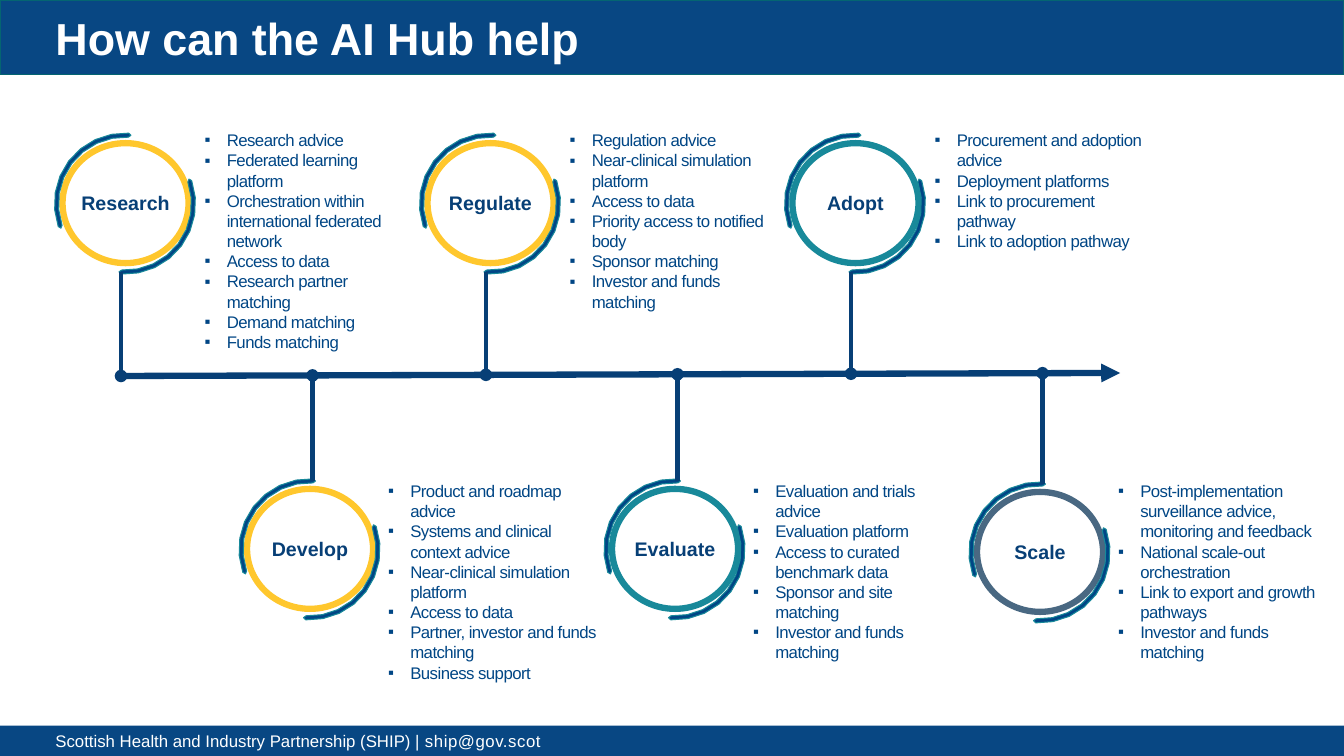
from math import cos, radians, sin
from lxml import etree
from pptx import Presentation, util as u
from pptx.dml.color import RGBColor
from pptx.enum import shapes, text
from pptx.oxml.ns import qn

BAR = RGBColor(0x08, 0x47, 0x83)
EDGE = RGBColor(0x04, 0x65, 0x71)
NAVY = RGBColor(0x07, 0x3F, 0x76)
BLUE = RGBColor(0x00, 0x46, 0x85)
GOLD = RGBColor(0xFF, 0xC7, 0x2D)
TEAL = RGBColor(0x18, 0x89, 0x9A)
SLATE = RGBColor(0x49, 0x68, 0x82)
WHITE = RGBColor(0xFF, 0xFF, 0xFF)

TITLE = "How can the AI Hub help"
FOOT = [("Scottish Health and Industry Partnership (SHIP) | ", 0), ("ship@gov.scot", 40)]

# Name, ring colour, ring centre height, list width, list items
UPPER = [
    ("Research", GOLD, 2.02, 2.06, [
        "Research advice", "Federated learning platform",
        "Orchestration within international federated network",
        "Access to data", "Research partner matching",
        "Demand matching", "Funds matching"]),
    ("Regulate", GOLD, 2.02, 2.06, [
        "Regulation advice", "Near-clinical simulation platform",
        "Access to data", "Priority access to notified body",
        "Sponsor matching", "Investor and funds matching"]),
    ("Adopt", TEAL, 2.02, 2.06, [
        "Procurement and adoption advice", "Deployment platforms",
        "Link to procurement pathway", "Link to adoption pathway"]),
]
LOWER = [
    ("Develop", GOLD, 5.45, 2.14, [
        "Product and roadmap advice", "Systems and clinical context advice",
        "Near-clinical simulation platform", "Access to data",
        "Partner, investor and funds matching", "Business support"]),
    ("Evaluate", TEAL, 5.45, 2.06, [
        "Evaluation and trials advice", "Evaluation platform",
        "Access to curated benchmark data", "Sponsor and site matching",
        "Investor and funds matching"]),
    ("Scale", SLATE, 5.48, 2.06, [
        "Post-implementation surveillance advice, monitoring and feedback",
        "National scale-out orchestration",
        "Link to export and growth pathways", "Investor and funds matching"]),
]
# Stages, first ring centre, stem offset, stem reach from centre, list offset, list top
ROWS = [(UPPER, 1.24, -0.04, 0.68, 0.79, 1.29),
        (LOWER, 3.07, 0.03, -0.68, 0.78, 4.77)]
STEP = 3.62
WIDE, HIGH = 13.33, 7.5
START, END = (1.2, 3.73), (11.11, 3.7)

deck = Presentation()
deck.slide_width, deck.slide_height = u.Inches(WIDE), u.Inches(HIGH)
slide = deck.slides.add_slide(deck.slide_layouts[6])


def paint(shape, fill, line=None, width=0):
    shape.shadow.inherit = False
    shape.fill.solid()
    shape.fill.fore_color.rgb = fill
    if line is None:
        shape.line.fill.background()
    else:
        shape.line.color.rgb = line
        shape.line.width = u.Pt(width)


def frame(shape, left=0, top=0, right=0, bottom=0, anchor=text.MSO_ANCHOR.MIDDLE):
    body = shape.text_frame
    body.word_wrap = True
    body.vertical_anchor = anchor
    body.margin_left, body.margin_top = u.Inches(left), u.Inches(top)
    body.margin_right, body.margin_bottom = u.Inches(right), u.Inches(bottom)
    return body


def write(para, words, size, color, bold=False, gap=0):
    """Add one run; gap is letter spacing in hundredths of a point."""
    run = para.add_run()
    run.text = words
    font = run.font
    font.name, font.size, font.bold = "Arial", u.Pt(size), bold
    font.color.rgb = color
    if gap:
        font._element.set("spc", str(gap))


def block(home, kind, x, y, w, h):
    return home.add_shape(kind, *map(u.Inches, (x, y, w, h)))


def banner(y, h, line=None):
    bar = block(slide.shapes, shapes.MSO_SHAPE.RECTANGLE, 0, y, WIDE, h)
    paint(bar, BAR, line, 1)
    para = frame(bar, 0.55, 0.05, 0.08, 0.05).paragraphs[0]
    para.alignment = text.PP_ALIGN.LEFT
    return para


def link(start, end, width, tip):
    line = slide.shapes.add_connector(
        shapes.MSO_CONNECTOR.STRAIGHT, *map(u.Inches, start + end))
    line.line.color.rgb = NAVY
    line.line.width = u.Pt(width)
    props = line._element.spPr
    etree.SubElement(props.find(qn("a:ln")), qn("a:tailEnd"), type=tip)
    etree.SubElement(props, qn("a:effectLst"))


def swoosh(home, x, y, turn):
    """Draw a thin arc band with pointed ends around a ring."""
    sweep = range(-19, 94, 14)
    polar = [(0.7, a) for a in sweep] + [(0.68, 95)]
    polar += [(0.66, a) for a in reversed(sweep)] + [(0.68, -21)]
    dots = [(u.Inches(x + r * cos(radians(a + turn))),
             u.Inches(y + r * sin(radians(a + turn)))) for r, a in polar]
    pen = home.build_freeform(*dots[0])
    pen.add_line_segments(dots[1:])
    paint(pen.convert_to_shape(), BLUE, TEAL, 0.75)


def badge(name, color, x, y):
    home = slide.shapes.add_group_shape().shapes
    ring = block(home, shapes.MSO_SHAPE.OVAL, x - 0.62, y - 0.6, 1.25, 1.19)
    paint(ring, WHITE, color, 4.5)
    para = frame(ring).paragraphs[0]
    para.alignment = text.PP_ALIGN.CENTER
    write(para, name, 14, NAVY, True)
    for turn in (0, 180):
        swoosh(home, x, y, turn)


def bullets(items, x, y, w):
    box = slide.shapes.add_textbox(*map(u.Inches, (x, y, w, 2)))
    body = frame(box, anchor=text.MSO_ANCHOR.TOP)
    for i, item in enumerate(items):
        para = body.add_paragraph() if i else body.paragraphs[0]
        props = para._p.get_or_add_pPr()
        props.set("marL", str(u.Inches(0.22)))
        props.set("indent", str(u.Inches(-0.22)))
        etree.SubElement(props, qn("a:buFont"), typeface="Arial")
        etree.SubElement(props, qn("a:buChar"), char="▪")
        write(para, item, 12, BLUE, gap=-40)


foot = banner(7.2, 0.3)
for words, gap in FOOT:
    write(foot, words, 12, WHITE, gap=gap)
write(banner(0, 0.74, EDGE), TITLE, 32, WHITE, True)

link(START, END, 4.5, "triangle")
slope = (END[1] - START[1]) / (END[0] - START[0])
for stages, first, shift, reach, inset, top in ROWS:
    for i, (name, color, y, w, items) in enumerate(stages):
        x = first + i * STEP
        badge(name, color, x, y)
        stem = x + shift
        link((stem, y + reach), (stem, START[1] + slope * (stem - START[0])), 3, "oval")
        bullets(items, x + inset, top, w)

deck.save("out.pptx")
